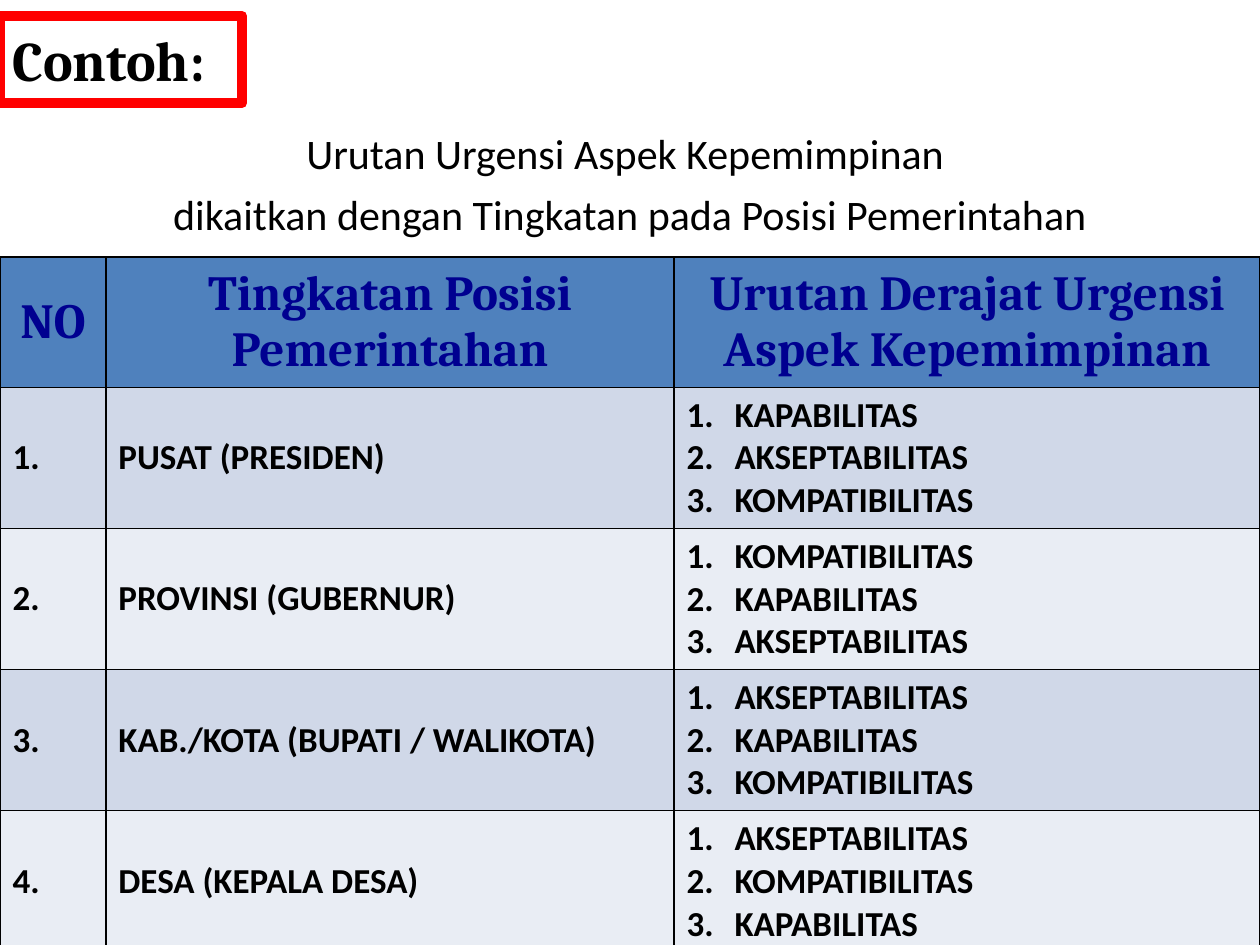
import pptx
import pptx.util
from pptx.dml.color import RGBColor
from pptx.enum.text import MSO_ANCHOR, MSO_AUTO_SIZE, PP_ALIGN
from pptx.oxml import parse_xml
from pptx.oxml.ns import nsdecls

BLACK = RGBColor(0x00, 0x00, 0x00)
RED = RGBColor(0xFF, 0x00, 0x00)
NAVY = RGBColor(0x00, 0x00, 0x90)
HEADER_BLUE = RGBColor(0x4F, 0x81, 0xBD)
ROW_TINTS = (RGBColor(0xD0, 0xD8, 0xE8), RGBColor(0xE9, 0xED, 0xF4))

WIDTH = pptx.util.Inches(10)
HEIGHT = pptx.util.Inches(7.5)
COLUMN_SHARES = (0.084, 0.451, 0.465)
HEADER_HEIGHT = pptx.util.Inches(1.01)
ROW_HEIGHT = pptx.util.Inches(1.12)
NUMBER_INDENT = pptx.util.Inches(0.38)

HEADINGS = (
    ["NO"],
    ["Tingkatan Posisi", "Pemerintahan"],
    ["Urutan Derajat Urgensi", "Aspek Kepemimpinan"],
)
CAPABILITY, ACCEPTABILITY, COMPATIBILITY = (
    "KAPABILITAS", "AKSEPTABILITAS", "KOMPATIBILITAS")
LEVELS = (
    ("PUSAT (PRESIDEN)", [CAPABILITY, ACCEPTABILITY, COMPATIBILITY]),
    ("PROVINSI (GUBERNUR)", [COMPATIBILITY, CAPABILITY, ACCEPTABILITY]),
    ("KAB./KOTA (BUPATI / WALIKOTA)", [ACCEPTABILITY, CAPABILITY, COMPATIBILITY]),
    ("DESA (KEPALA DESA)", [ACCEPTABILITY, COMPATIBILITY, CAPABILITY]),
)


def write(frame, lines, font="Calibri", size=20, color=BLACK, bold=False,
          align=PP_ALIGN.LEFT, after=0, numbered=False):
    """Fill a text frame with one paragraph per line."""
    for index, line in enumerate(lines):
        paragraph = frame.add_paragraph() if index else frame.paragraphs[0]
        if numbered:
            properties = paragraph._p.get_or_add_pPr()
            properties.set("marL", str(NUMBER_INDENT))
            properties.set("indent", str(-NUMBER_INDENT))
            properties.append(parse_xml(
                f'<a:buAutoNum {nsdecls("a")} type="arabicPeriod"/>'))
        paragraph.alignment = align
        paragraph.space_after = pptx.util.Pt(after)
        run = paragraph.add_run()
        run.text = line
        run.font.name = font
        run.font.size = pptx.util.Pt(size)
        run.font.bold = bold
        run.font.color.rgb = color


def place_title(title, left, top, width, height):
    title.left, title.top, title.width, title.height = left, top, width, height
    title.line.color.rgb = RED
    title.line.width = pptx.util.Pt(6)
    frame = title.text_frame
    frame.auto_size = MSO_AUTO_SIZE.NONE
    frame.vertical_anchor = MSO_ANCHOR.MIDDLE
    write(frame, ["Contoh:"], font="Cambria", size=32, bold=True)


def add_subtitle(slide, left, top, width, height):
    frame = slide.shapes.add_textbox(left, top, width, height).text_frame
    frame.word_wrap = True
    write(frame, ["Urutan Urgensi Aspek Kepemimpinan ",
                  "dikaitkan dengan Tingkatan pada Posisi Pemerintahan"],
          size=24, align=PP_ALIGN.CENTER, after=6)


def fill_cell(cell, lines, fill, anchor=MSO_ANCHOR.MIDDLE, **text_format):
    """Give a cell its text, fill and thin black borders."""
    cell.fill.solid()
    cell.fill.fore_color.rgb = fill
    cell.vertical_anchor = anchor
    properties = cell._tc.get_or_add_tcPr()
    for position, side in enumerate(("lnL", "lnR", "lnT", "lnB")):
        properties.insert(position, parse_xml(
            f'<a:{side} {nsdecls("a")} w="{pptx.util.Pt(1)}"><a:solidFill>'
            f'<a:srgbClr val="{BLACK}"/></a:solidFill></a:{side}>'))
    write(cell.text_frame, lines, bold=True, **text_format)


def add_urgency_table(slide, left, top, width):
    height = HEADER_HEIGHT + len(LEVELS) * ROW_HEIGHT
    table = slide.shapes.add_table(
        len(LEVELS) + 1, len(HEADINGS), left, top, width, height).table
    for column, share in zip(table.columns, COLUMN_SHARES):
        column.width = int(width * share)
    for index, row in enumerate(table.rows):
        row.height = ROW_HEIGHT if index else HEADER_HEIGHT
    for column, heading in enumerate(HEADINGS):
        fill_cell(table.cell(0, column), heading, HEADER_BLUE, font="Cambria",
                  size=28, color=NAVY, align=PP_ALIGN.CENTER)
    for number, (position, aspects) in enumerate(LEVELS, start=1):
        tint = ROW_TINTS[(number - 1) % 2]
        fill_cell(table.cell(number, 0), [f"{number}."], tint)
        fill_cell(table.cell(number, 1), [position], tint)
        fill_cell(table.cell(number, 2), aspects, tint,
                  anchor=MSO_ANCHOR.TOP, numbered=True)


def main():
    deck = pptx.Presentation()
    deck.slide_width, deck.slide_height = WIDTH, HEIGHT
    slide = deck.slides.add_slide(deck.slide_layouts[5])
    place_title(slide.shapes.title, 0, int(HEIGHT * 0.017),
                int(WIDTH * 0.192), int(HEIGHT * 0.092))
    subtitle_top = int(HEIGHT * 0.128)
    add_subtitle(slide, 0, subtitle_top, WIDTH, HEIGHT - subtitle_top)
    add_urgency_table(slide, 0, int(HEIGHT * 0.272), WIDTH)
    deck.save("out.pptx")


if __name__ == "__main__":
    main()
